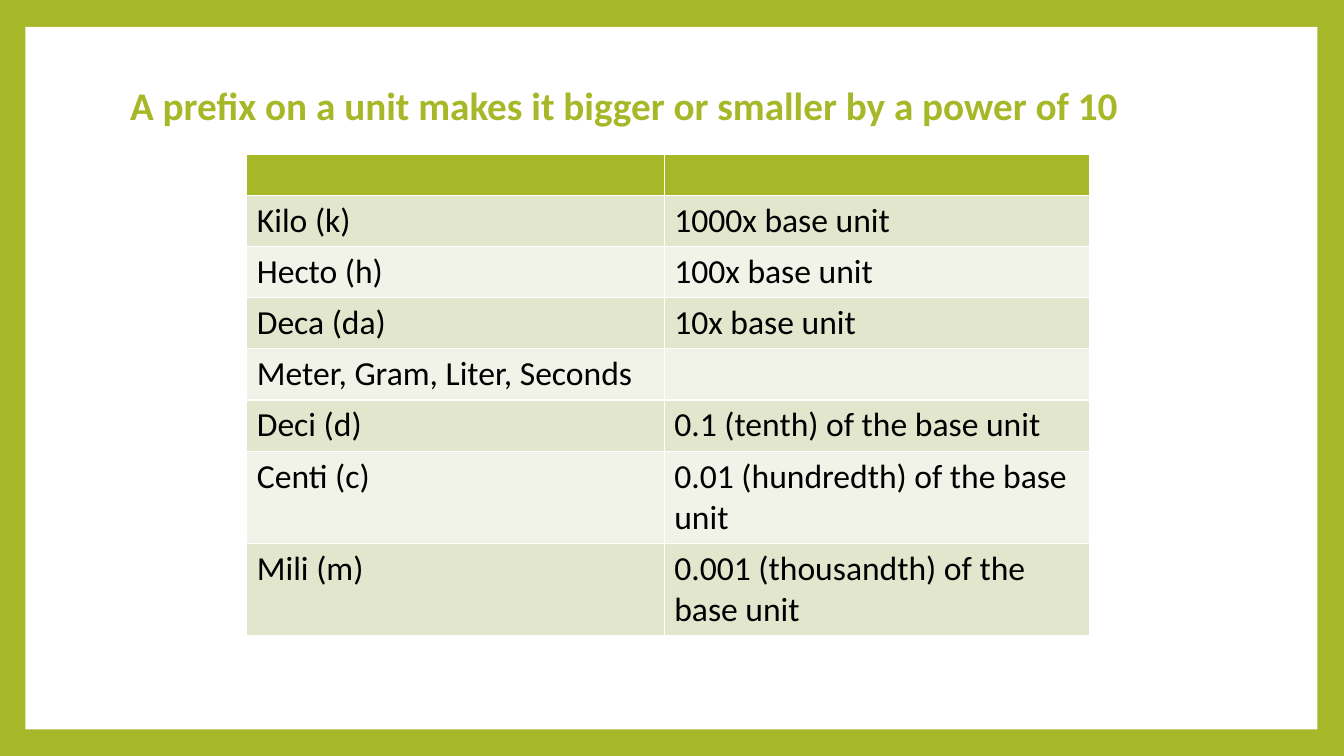
"""Build a slide that lists the metric prefixes and their powers of ten."""
import pptx
import pptx.dml.color
import pptx.enum.shapes
import pptx.enum.text
import pptx.util
from pptx.util import Cm

GREEN = pptx.dml.color.RGBColor(0xA6, 0xB7, 0x27)
DARK_BAND = pptx.dml.color.RGBColor(0xE1, 0xE6, 0xCD)
LIGHT_BAND = pptx.dml.color.RGBColor(0xF1, 0xF3, 0xE8)
WHITE = pptx.dml.color.RGBColor(0xFF, 0xFF, 0xFF)
BLACK = pptx.dml.color.RGBColor(0x00, 0x00, 0x00)
FONT = "Calibri"

TITLE = "A prefix on a unit makes it bigger or smaller by a power of 10"
PREFIXES = [
    ("", ""),
    ("Kilo (k)", "1000x base unit"),
    ("Hecto (h)", "100x base unit"),
    ("Deca (da)", "10x base unit"),
    ("Meter, Gram, Liter, Seconds", ""),
    ("Deci (d)", "0.1 (tenth) of the base unit"),
    ("Centi (c)", "0.01 (hundredth) of the base unit"),
    ("Mili (m)", "0.001 (thousandth) of the base unit"),
]
COLUMN_WIDTHS = [10.52, 10.72]
ROW_HEIGHTS = [1.03] + [1.29] * 5 + [2.32] * 2


def format_runs(paragraph, size, color, bold=False):
    for run in paragraph.runs:
        run.font.name = FONT
        run.font.size = pptx.util.Pt(size)
        run.font.color.rgb = color
        run.font.bold = bold


def add_frame(slide):
    slide.background.fill.solid()
    slide.background.fill.fore_color.rgb = GREEN
    panel = slide.shapes.add_shape(
        pptx.enum.shapes.MSO_SHAPE.RECTANGLE, Cm(0.64), Cm(0.68), Cm(32.56), Cm(17.7)
    )
    panel.shadow.inherit = False
    panel.fill.solid()
    panel.fill.fore_color.rgb = WHITE
    panel.line.fill.background()
    slide.shapes._spTree.insert(2, panel._element)


def fill_title(slide):
    title = slide.shapes.title
    title.left, title.top, title.width, title.height = Cm(2.9), Cm(2.06), Cm(27.43), Cm(1.6)
    frame = title.text_frame
    frame.text = TITLE
    frame.word_wrap = True
    frame.auto_size = pptx.enum.text.MSO_AUTO_SIZE.NONE
    frame.vertical_anchor = pptx.enum.text.MSO_ANCHOR.TOP
    frame.margin_left = Cm(0.38)
    paragraph = frame.paragraphs[0]
    paragraph.alignment = pptx.enum.text.PP_ALIGN.LEFT
    paragraph.line_spacing = 0.9
    format_runs(paragraph, 28, GREEN, bold=True)


def add_prefix_table(slide):
    table = slide.shapes.add_table(
        len(PREFIXES), len(COLUMN_WIDTHS), Cm(6.22), Cm(3.89),
        Cm(sum(COLUMN_WIDTHS)), Cm(sum(ROW_HEIGHTS)),
    ).table
    for column, width in zip(table.columns, COLUMN_WIDTHS):
        column.width = Cm(width)
    for index, (row, height, texts) in enumerate(zip(table.rows, ROW_HEIGHTS, PREFIXES)):
        row.height = Cm(height)
        band = DARK_BAND if index % 2 else LIGHT_BAND
        for cell, text in zip(row.cells, texts):
            cell.fill.solid()
            cell.fill.fore_color.rgb = band if index else GREEN
            cell.text_frame.text = text
            format_runs(cell.text_frame.paragraphs[0], 24, BLACK)


def main():
    presentation = pptx.Presentation()
    presentation.slide_width = Cm(33.87)
    presentation.slide_height = Cm(19.05)
    slide = presentation.slides.add_slide(presentation.slide_layouts.get_by_name("Title Only"))
    add_frame(slide)
    fill_title(slide)
    add_prefix_table(slide)
    presentation.save("out.pptx")


if __name__ == "__main__":
    main()
